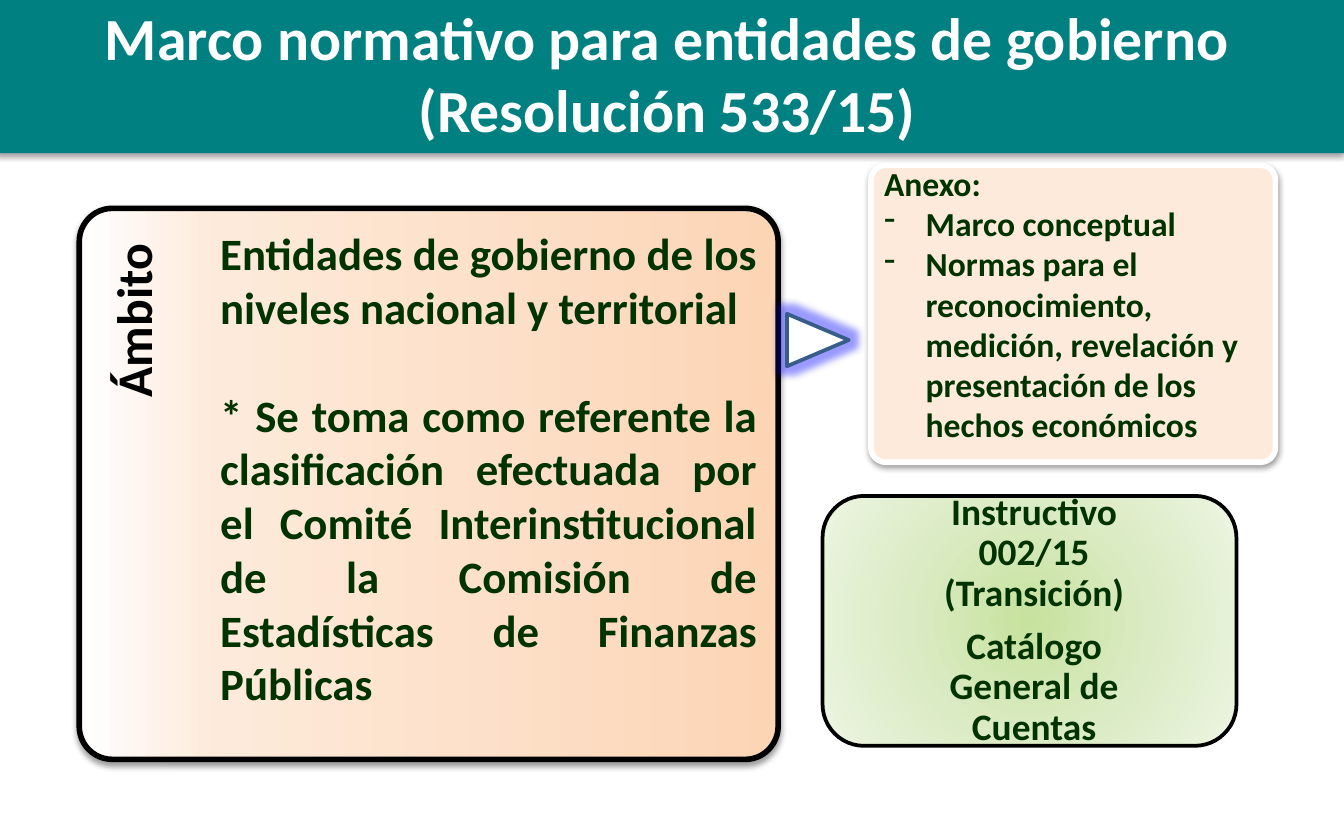
import pptx
import pptx.util
import pptx.oxml
import pptx.dml.color
import pptx.enum.shapes
import pptx.enum.text

PX = 9144  # 100 px to the inch
COLORS = {
    "teal": "008080", "white": "FFFFFF", "black": "000000", "ink": "003300",
    "peach": "FCD5B5", "pale_peach": "FDEADA", "steel": "385D8A", "glow": "0000FF",
    "green": "C7E29E", "mid_green": "DBEBC4", "pale_green": "EDF5E2",
}
NS = 'xmlns:a="http://schemas.openxmlformats.org/drawingml/2006/main"'
SHADOW = ('<a:outerShdw blurRad="40000" dist="20000" dir="5400000" rotWithShape="0">'
          '<a:srgbClr val="000000"><a:alpha val="38000"/></a:srgbClr></a:outerShdw>')
GLOW = (f'<a:glow rad="101600"><a:srgbClr val="{COLORS["glow"]}">'
        '<a:alpha val="40000"/></a:srgbClr></a:glow>')
LINEAR = '<a:lin ang="16200000" scaled="0"/>'
CIRCLE = '<a:path path="circle"><a:fillToRect l="50000" t="50000" r="50000" b="50000"/></a:path>'

shape_types = pptx.enum.shapes.MSO_SHAPE
align = pptx.enum.text.PP_ALIGN
middle = pptx.enum.text.MSO_ANCHOR.MIDDLE

deck = pptx.Presentation()
deck.slide_width, deck.slide_height = 1000 * PX, 625 * PX
page = deck.slides.add_slide(deck.slide_layouts[6])


def add_panel(kind, place, fill, line=None, width=0, effect="", rotation=0, geometry=""):
    """Add a shape; fill is a colour name, or a list of (percent, name) gradient stops."""
    panel = page.shapes.add_shape(kind, *[n * PX for n in place])
    panel.rotation = rotation
    panel.shadow.inherit = False
    if isinstance(fill, str):
        panel.fill.solid()
        panel.fill.fore_color.rgb = pptx.dml.color.RGBColor.from_string(COLORS[fill])
    else:
        stops = "".join(f'<a:gs pos="{at * 1000}"><a:srgbClr val="{COLORS[name]}"/></a:gs>'
                        for at, name in fill)
        panel._element.spPr.find(pptx.oxml.ns.qn("a:prstGeom")).addnext(pptx.oxml.parse_xml(
            f'<a:gradFill {NS} rotWithShape="1"><a:gsLst>{stops}</a:gsLst>{geometry}</a:gradFill>'))
    if line:
        panel.line.color.rgb = pptx.dml.color.RGBColor.from_string(COLORS[line])
        panel.line.width = pptx.util.Pt(width)
    else:
        panel.line.fill.background()
    if effect:
        effects = panel._element.spPr.find(pptx.oxml.ns.qn("a:effectLst"))
        effects.getparent().replace(
            effects, pptx.oxml.parse_xml(f'<a:effectLst {NS}>{effect}</a:effectLst>'))
    return panel


def write(box, texts, size, color, paragraph_format, frame_format=None, bullets_from=None):
    """Fill a box with bold paragraphs; those from index bullets_from on get a dash."""
    frame = box.text_frame
    frame.word_wrap = True
    for name, value in (frame_format or {}).items():
        setattr(frame, name, value)
    for index, text in enumerate(texts):
        para = frame.paragraphs[0] if index == 0 else frame.add_paragraph()
        para.text = text
        if bullets_from is not None and index >= bullets_from:
            properties = para._p.get_or_add_pPr()
            properties.set("marL", str(31 * PX))
            properties.set("indent", str(-31 * PX))
            properties.append(pptx.oxml.parse_xml(f'<a:buChar {NS} char="-"/>'))
        for name, value in paragraph_format.items():
            if not (name == "space_before" and index == 0):
                setattr(para, name, value)
        for span in para.runs:
            font_format = {"name": "Calibri", "size": pptx.util.Pt(size), "bold": True}
            for name, value in font_format.items():
                setattr(span.font, name, value)
            span.font.color.rgb = pptx.dml.color.RGBColor.from_string(COLORS[color])


# Heading
add_panel(shape_types.RECTANGLE, (-4, -2, 1004, 116), "teal", effect=SHADOW)
title = page.shapes.add_textbox(12 * PX, 5 * PX, 969 * PX, 98 * PX)
write(title, ["Marco normativo para entidades de gobierno\v(Resolución 533/15)"], 32, "white",
      {"alignment": align.CENTER}, {"vertical_anchor": middle})

# Scope
scope = add_panel(shape_types.ROUNDED_RECTANGLE, (114, 100, 410, 520),
                  [(0, "peach"), (80, "pale_peach"), (100, "white")],
                  "black", 3, SHADOW, 270, LINEAR)
scope.adjustments[0] = 0.06
write(scope, ["Ámbito"], 26.7, "black", {"alignment": align.RIGHT, "line_spacing": 0.9},
      {"vertical_anchor": pptx.enum.text.MSO_ANCHOR.TOP, "margin_left": 74 * PX,
       "margin_top": 15 * PX, "margin_right": 19 * PX, "margin_bottom": 349 * PX})
scope_text = page.shapes.add_textbox(154 * PX, 163 * PX, 419 * PX, 414 * PX)
write(scope_text, [
    "Entidades de gobierno de los niveles nacional y territorial",
    "* Se toma como referente la clasificación efectuada por el Comité Interinstitucional "
    "de la Comisión de Estadísticas de Finanzas Públicas",
], 24, "ink", {"alignment": align.JUSTIFY, "space_before": pptx.util.Pt(29)})

# Annex
annex = add_panel(shape_types.ROUNDED_RECTANGLE, (648, 123, 301, 221), "pale_peach",
                  "white", 3, SHADOW)
annex.adjustments[0] = 0.05
annex_text = page.shapes.add_textbox(648 * PX, 116 * PX, 317 * PX, 253 * PX)
write(annex_text, [
    "Anexo:", "Marco conceptual",
    "Normas para el reconocimiento, medición, revelación y presentación de los "
    "hechos económicos",
], 18, "ink", {"alignment": align.LEFT}, bullets_from=1)
add_panel(shape_types.FLOWCHART_EXTRACT, (589, 230, 39, 46), "white", "steel", 2, GLOW, 90)

# Instruction
instruction = add_panel(shape_types.FLOWCHART_ALTERNATE_PROCESS, (612, 369, 308, 186),
                        [(0, "green"), (50, "mid_green"), (100, "pale_green")],
                        "black", 2, geometry=CIRCLE)
write(instruction, ["Instructivo 002/15 (Transición)", "Catálogo General de Cuentas"], 20, "ink",
      {"alignment": align.CENTER, "line_spacing": 0.9, "space_after": pptx.util.Pt(7)},
      {"vertical_anchor": middle, "margin_left": 51 * PX, "margin_top": 4 * PX,
       "margin_right": 44 * PX, "margin_bottom": 4 * PX})

deck.save("out.pptx")
